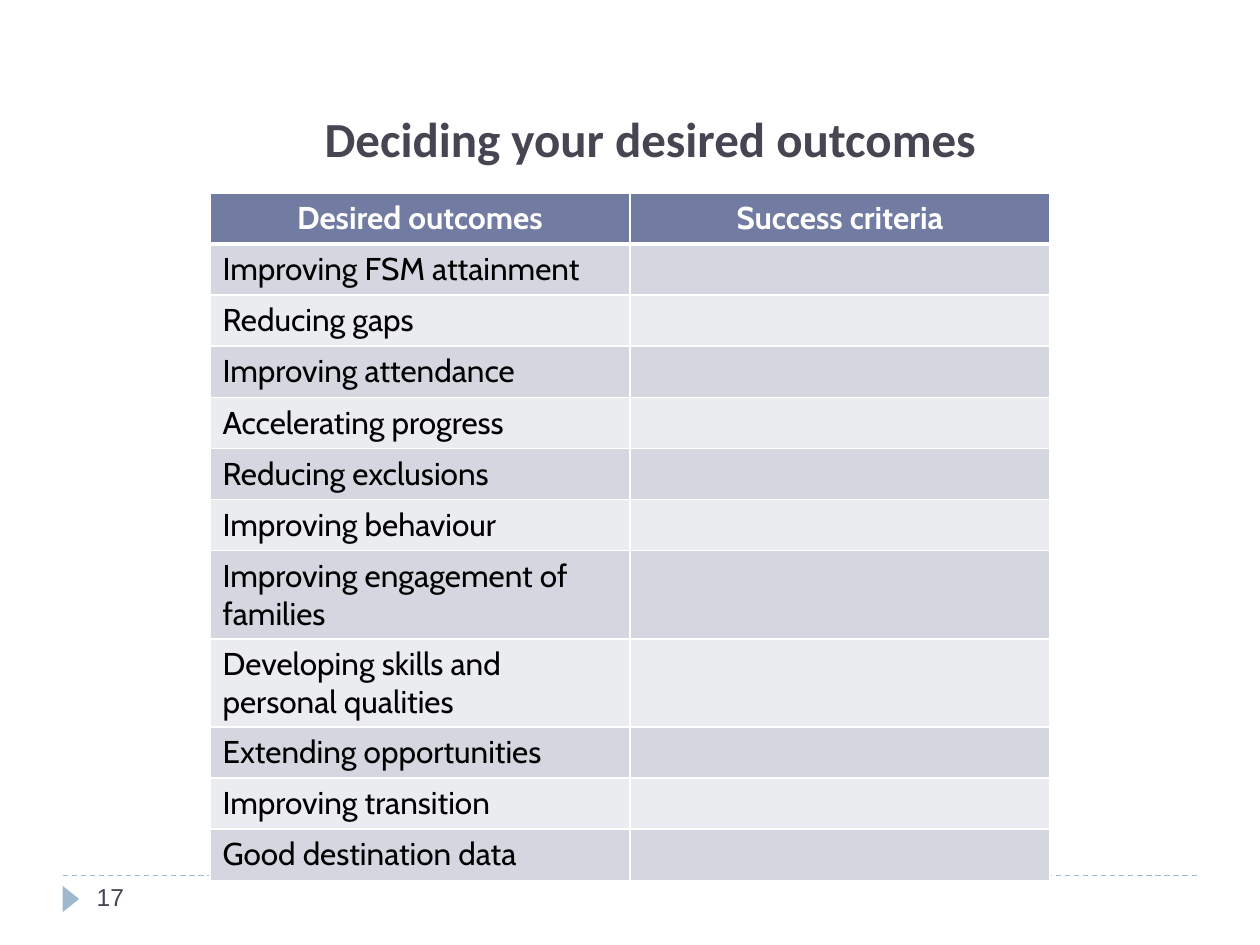
from dataclasses import dataclass

from lxml.etree import SubElement
from pptx import Presentation
from pptx.dml.color import RGBColor
from pptx.enum.dml import MSO_LINE_DASH_STYLE as Dash
from pptx.enum.shapes import MSO_CONNECTOR_TYPE as Connector, MSO_SHAPE as Shape
from pptx.enum.text import MSO_ANCHOR as Anchor, MSO_AUTO_SIZE as AutoSize, PP_ALIGN as Align
from pptx.oxml.ns import qn
from pptx.util import Pt

WHITE = RGBColor(0xFF, 0xFF, 0xFF)
BLACK = RGBColor(0, 0, 0)
SLATE = RGBColor(0x46, 0x46, 0x53)
SKY = RGBColor(0x9F, 0xB8, 0xCD)
HEADER_FILL = RGBColor(0x72, 0x7C, 0xA3)
BAND_FILLS = (RGBColor(0xD5, 0xD7, 0xE0), RGBColor(0xEB, 0xEC, 0xF0))

HEADINGS = ("Desired outcomes", "Success criteria")
OUTCOMES = (
    "Improving FSM attainment",
    "Reducing gaps",
    "Improving attendance",
    "Accelerating progress",
    "Reducing exclusions",
    "Improving behaviour",
    "Improving engagement of families",
    "Developing skills and personal qualities",
    "Extending opportunities",
    "Improving transition",
    "Good destination data",
)
COLUMN_WIDTH, ROW_HEIGHT = 240, 29.2
THIN, THICK = 1, 3


@dataclass(frozen=True)
class TextStyle:
    name: str
    size: float
    color: RGBColor
    bold: bool = False
    align: Align = Align.LEFT


TITLE = TextStyle("Calibri", 28, SLATE, True, Align.CENTER)
NUMBER = TextStyle("Arial", 14, SLATE)
HEADING = TextStyle("Cabin", 18, WHITE, True, Align.CENTER)
BODY = TextStyle("Cabin", 18, BLACK)


def write(frame, text: str, style: TextStyle) -> None:
    para = frame.paragraphs[0]
    para.alignment = style.align
    span = para.add_run()
    span.text = text
    formats = {"name": style.name, "size": Pt(style.size), "bold": style.bold}
    for key, value in formats.items():
        setattr(span.font, key, value)
    span.font.color.rgb = style.color


def place(shape, left: float, top: float, width: float, height: float) -> None:
    bounds = {"left": left, "top": top, "width": width, "height": height}
    for key, value in bounds.items():
        setattr(shape, key, Pt(value))


def add_borders(cell, top: float, bottom: float) -> None:
    """Draw white cell edges; call before filling the cell, as the schema puts lines first."""
    properties = cell._tc.get_or_add_tcPr()
    for side, width in {"L": THIN, "R": THIN, "T": top, "B": bottom}.items():
        line = SubElement(properties, qn(f"a:ln{side}"), w=str(Pt(width)))
        fill = SubElement(line, qn("a:solidFill"))
        SubElement(fill, qn("a:srgbClr"), val=str(WHITE))


def add_footer(page) -> None:
    rule = page.shapes.add_connector(Connector.STRAIGHT, Pt(36), Pt(500.4), Pt(684), Pt(500.4))
    rule.line.color.rgb = SKY
    rule.line.width = Pt(0.75)
    rule.line.dash_style = Dash.DASH
    SubElement(rule._element.spPr, qn("a:effectLst"))

    marker = page.shapes.add_shape(Shape.ISOSCELES_TRIANGLE, Pt(33), Pt(509), Pt(15), Pt(9.4))
    marker.rotation = 90
    marker.shadow.inherit = False
    marker.fill.solid()
    marker.fill.fore_color.rgb = SKY
    marker.line.fill.background()

    box = page.shapes.add_textbox(Pt(48.2), Pt(500.4), Pt(156), Pt(28.8))
    box.text_frame.word_wrap = True
    write(box.text_frame, "17", NUMBER)


def add_title(page) -> None:
    title = page.shapes.title
    place(title, 87.8, 65.5, 567.4, 33.8)
    frame = title.text_frame
    formats = {"vertical_anchor": Anchor.BOTTOM, "word_wrap": True, "auto_size": AutoSize.NONE}
    for key, value in formats.items():
        setattr(frame, key, value)
    write(frame, "Deciding your desired outcomes", TITLE)


def add_outcome_table(page) -> None:
    rows = [HEADINGS] + [(outcome, "") for outcome in OUTCOMES]
    table = page.shapes.add_table(
        len(rows), len(HEADINGS), Pt(120), Pt(110.2),
        Pt(COLUMN_WIDTH * len(HEADINGS)), Pt(ROW_HEIGHT * len(rows)),
    ).table
    for column in table.columns:
        column.width = Pt(COLUMN_WIDTH)
    for index, texts in enumerate(rows):
        table.rows[index].height = Pt(ROW_HEIGHT)
        is_header = index == 0
        for column, text in enumerate(texts):
            cell = table.cell(index, column)
            add_borders(cell, THICK if index == 1 else THIN, THICK if is_header else THIN)
            cell.fill.solid()
            cell.fill.fore_color.rgb = HEADER_FILL if is_header else BAND_FILLS[(index - 1) % 2]
            if text:
                write(cell.text_frame, text, HEADING if is_header else BODY)


def main() -> None:
    deck = Presentation()
    deck.slide_width, deck.slide_height = Pt(720), Pt(540)
    page = deck.slides.add_slide(deck.slide_layouts[5])
    add_footer(page)
    add_title(page)
    add_outcome_table(page)
    deck.save("out.pptx")


if __name__ == "__main__":
    main()
